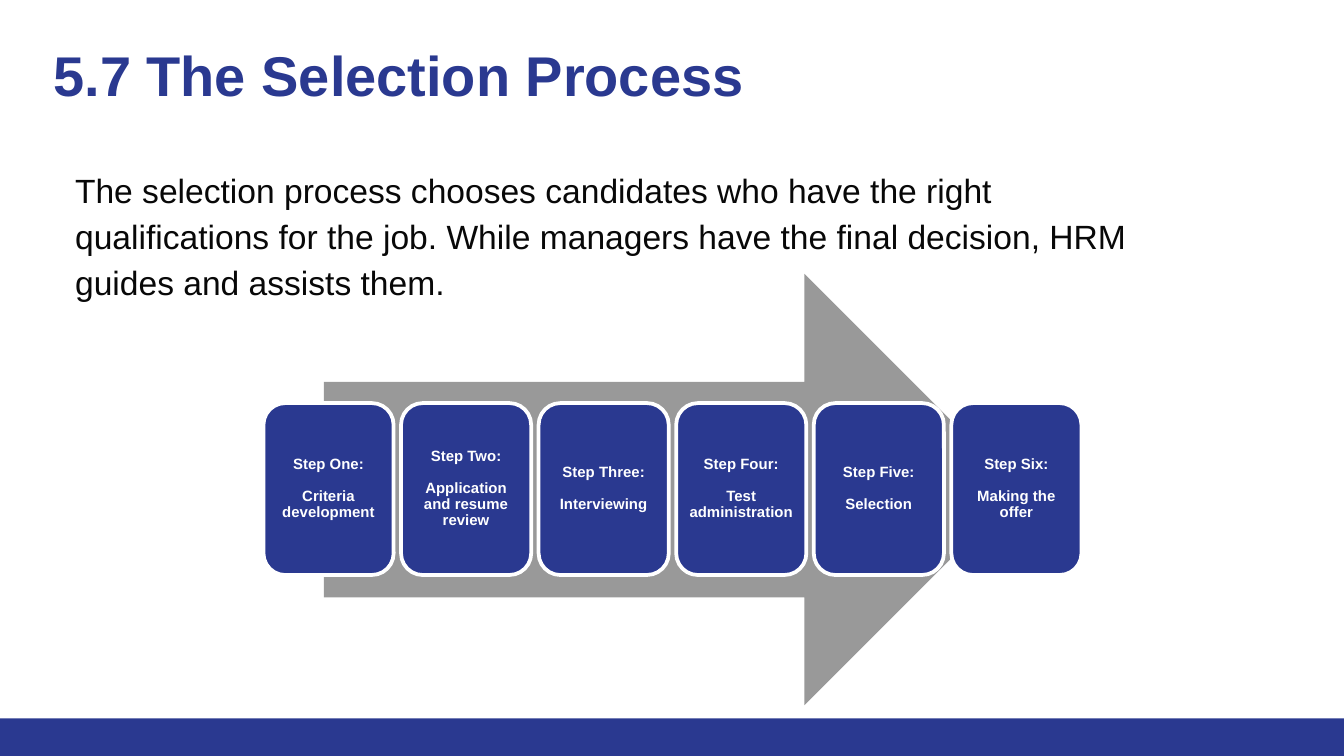
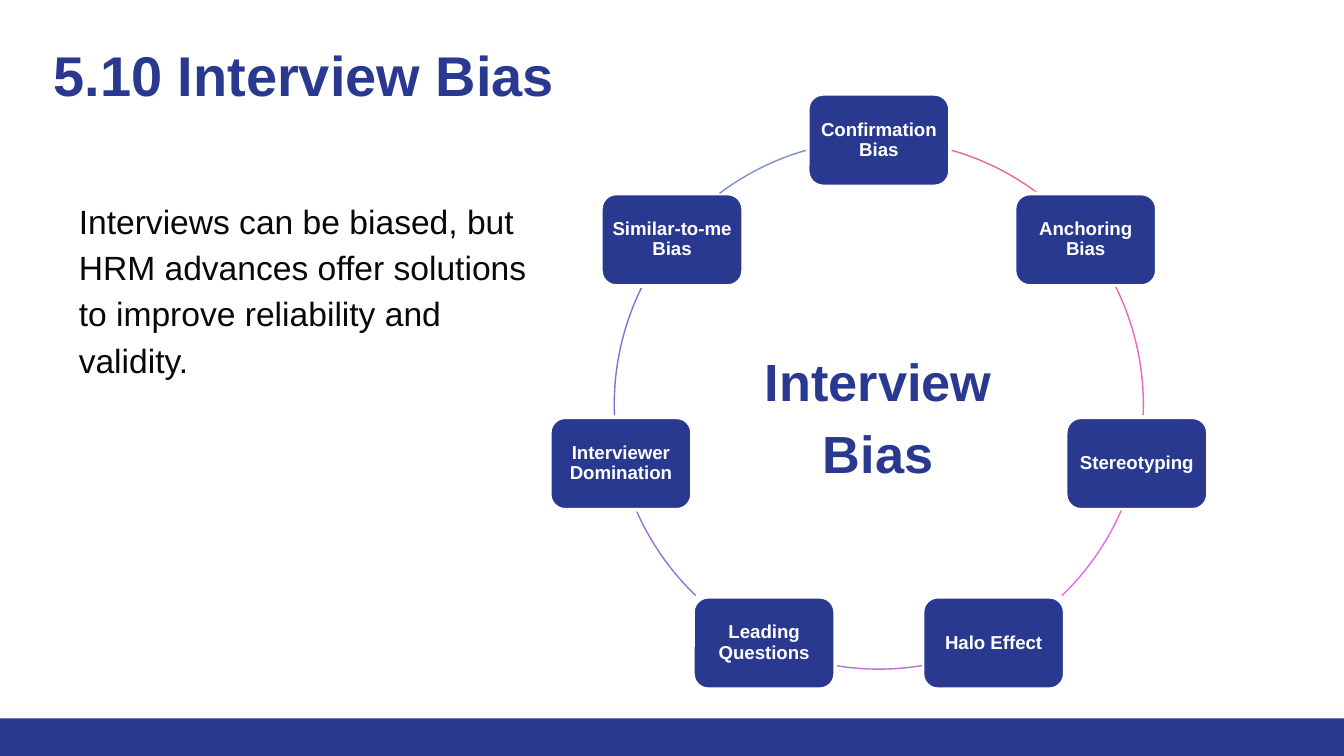
"""Builds two slides on candidate selection and interview bias."""
import math

import pptx
import pptx.dml.color
import pptx.enum.shapes
import pptx.enum.text
import pptx.util

Cm = pptx.util.Cm
Pt = pptx.util.Pt
kinds = pptx.enum.shapes.MSO_SHAPE
aligns = pptx.enum.text.PP_ALIGN
anchors = pptx.enum.text.MSO_ANCHOR
tone = pptx.dml.color.RGBColor.from_string

hues = {"navy": "2A3990", "ink": "080808", "grey": "999999", "white": "FFFFFF"}
arcs = ["F06292", "EA65BD", "E569E3", "BC6CDF", "9770D9", "7874D3", "7890CD"]


def place(page, kind, left, top, wide, high, fill=None, line=None, thick=2):
    """Add a flat shape with lengths in centimetres."""
    shape = page.shapes.add_shape(kind, Cm(left), Cm(top), Cm(wide), Cm(high))
    shape.shadow.inherit = False
    if fill:
        shape.fill.solid()
        shape.fill.fore_color.rgb = tone(fill)
    else:
        shape.fill.background()
    if line:
        shape.line.color.rgb = tone(line)
        shape.line.width = Pt(thick)
    else:
        shape.line.fill.background()
    return shape


def write(shape, text, size=18, hue="ink", bold=False, align=aligns.LEFT,
          anchor=anchors.TOP, inset=0.25, indent=0, space=1.0, after=0):
    """Fill a shape with one paragraph per line of text."""
    frame = shape.text_frame
    frame.word_wrap = True
    frame.vertical_anchor = anchor
    frame.margin_left = Cm(inset + indent)
    frame.margin_right = frame.margin_top = frame.margin_bottom = Cm(inset)
    lines = text.split("\n")
    for rank, line in enumerate(lines):
        para = frame.paragraphs[0] if rank == 0 else frame.add_paragraph()
        para.alignment = align
        para.line_spacing = space
        para.space_after = Pt(after if rank < len(lines) - 1 else 0)
        run = para.add_run()
        run.text = line
        run.font.name = "Arial"
        run.font.size = Pt(size)
        run.font.bold = bold
        run.font.color.rgb = tone(hues[hue])


deck = pptx.Presentation()
deck.slide_width = Cm(25.4)
deck.slide_height = Cm(14.29)

pages = [
    ("5.7 The Selection Process",
     "The selection process chooses candidates who have the right qualifications "
     "for the job. While managers have the final decision, HRM guides and assists them.",
     (0.86, 2.84, 21.16, 3.45), 0.31),
    ("5.10 Interview Bias",
     "Interviews can be biased, but HRM advances offer solutions to improve "
     "reliability and validity.",
     (1.22, 3.43, 9.09, 5.33), 0.02),
]
for title, body, area, indent in pages:
    page = deck.slides.add_slide(deck.slide_layouts[6])
    place(page, kinds.RECTANGLE, 0, 13.58, 25.4, 0.71, hues["navy"])
    head = page.shapes.add_textbox(Cm(0.76), Cm(0.51), Cm(23.67), Cm(1.68))
    write(head, title, size=30, hue="navy", bold=True)
    text = page.shapes.add_textbox(*map(Cm, area))
    write(text, body, indent=indent, space=1.15)

label = dict(hue="white", bold=True, align=aligns.CENTER, anchor=anchors.MIDDLE, space=0.9)

page = deck.slides[0]
place(page, kinds.RIGHT_ARROW, 6.12, 5.18, 13.16, 8.15, hues["grey"])
steps = [
    "Step One:\nCriteria development",
    "Step Two:\nApplication and resume review",
    "Step Three:\nInterviewing",
    "Step Four:\nTest administration",
    "Step Five:\nSelection",
    "Step Six:\nMaking the offer",
]
for rank, step in enumerate(steps):
    card = place(page, kinds.ROUNDED_RECTANGLE, 4.98 + 2.6 * rank, 7.62, 2.46, 3.25,
                 hues["navy"], hues["white"])
    write(card, step, size=8, inset=0.08, after=8.5, **label)

page = deck.slides[1]
biases = ["Confirmation Bias", "Anchoring Bias", "Stereotyping", "Halo Effect",
          "Leading Questions", "Interviewer Domination", "Similar-to-me Bias"]
mid, low, reach = 16.61, 7.65, 5
wide, high = 2.69, 1.75
spans = [(16, 37), (63.6, 92.3), (113.6, 136.2), (170.6, 189.4)]
spans += [(360 - end, 360 - start) for start, end in reversed(spans[:3])]
for rank, (bias, span, hue) in enumerate(zip(biases, spans, arcs)):
    turn = math.tau * rank / len(biases)
    left = mid + reach * math.sin(turn) - wide / 2
    top = low - reach * math.cos(turn) - high / 2
    node = place(page, kinds.ROUNDED_RECTANGLE, left, top, wide, high,
                 hues["navy"], hues["white"])
    write(node, bias, size=10, inset=0.1, **label)
    arc = place(page, kinds.ARC, mid - reach, low - reach, 2 * reach, 2 * reach,
                line=hue, thick=0.75)
    for side, angle in enumerate(span):
        arc.adjustments[side] = (angle - 90) % 360 * 0.6

core = page.shapes.add_textbox(Cm(13.23), Cm(6.17), Cm(6.73), Cm(2.87))
write(core, "Interview Bias", size=28, hue="navy", bold=True, align=aligns.CENTER, space=1.15)

deck.save("out.pptx")
